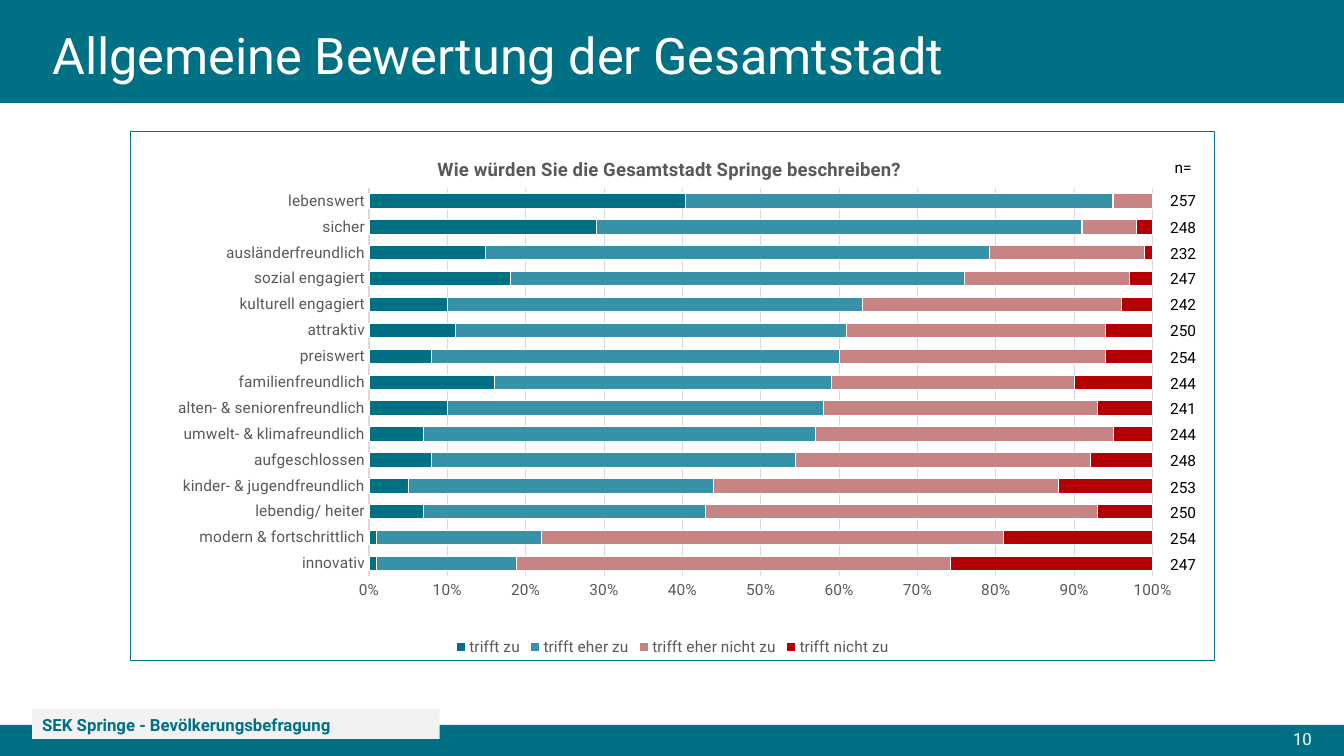
from dataclasses import dataclass

from lxml import etree
from pptx import Presentation
from pptx.chart.chart import Chart
from pptx.chart.data import CategoryChartData
from pptx.dml.color import RGBColor
from pptx.enum.chart import XL_CHART_TYPE as ChartType
from pptx.enum.chart import XL_LEGEND_POSITION as LegendPosition
from pptx.enum.chart import XL_TICK_MARK as TickMark
from pptx.enum.text import MSO_ANCHOR as Anchor
from pptx.enum.text import PP_ALIGN as Align
from pptx.oxml import parse_xml
from pptx.oxml.ns import nsdecls, qn
from pptx.slide import Slide
from pptx.util import Pt
from pptx.enum.shapes import MSO_SHAPE as ShapeKind

EMU_PER_PX = 9144
FONT = "Roboto"

TEAL = RGBColor(0x00, 0x70, 0x85)
LIGHT_TEAL = RGBColor(0x38, 0x91, 0xA7)
ROSE = RGBColor(0xC7, 0x84, 0x84)
RED = RGBColor(0xB2, 0x00, 0x05)
WHITE = RGBColor(0xFF, 0xFF, 0xFF)
BLACK = RGBColor(0x00, 0x00, 0x00)
PALE_GREY = RGBColor(0xF2, 0xF2, 0xF2)
GRID_GREY = RGBColor(0xD9, 0xD9, 0xD9)
TEXT_GREY = RGBColor(0x59, 0x59, 0x59)


@dataclass(frozen=True)
class Box:
    left: int
    top: int
    width: int
    height: int

    def emu(self) -> tuple[int, ...]:
        return tuple(
            px(length) for length in (self.left, self.top, self.width, self.height)
        )


@dataclass(frozen=True)
class Label:
    text: str
    box: Box
    size: float
    color: RGBColor
    align: Align = Align.LEFT
    anchor: Anchor = Anchor.MIDDLE
    bold: bool = False
    spacing: float = 1.0
    fill: RGBColor | None = None


@dataclass(frozen=True)
class Rating:
    quality: str
    shares: tuple[int, int, int, int]
    respondents: int


@dataclass(frozen=True)
class Answer:
    name: str
    color: RGBColor


BANDS = (Box(0, 0, 1333, 102), Box(0, 719, 1333, 31))

ANSWERS = (
    Answer("trifft zu", TEAL),
    Answer("trifft eher zu", LIGHT_TEAL),
    Answer("trifft eher nicht zu", ROSE),
    Answer("trifft nicht zu", RED),
)

RATINGS = (
    Rating("lebenswert", (40, 54, 5, 0), 257),
    Rating("sicher", (29, 62, 7, 2), 248),
    Rating("ausländerfreundlich", (15, 65, 20, 1), 232),
    Rating("sozial engagiert", (18, 58, 21, 3), 247),
    Rating("kulturell engagiert", (10, 53, 33, 4), 242),
    Rating("attraktiv", (11, 50, 33, 6), 250),
    Rating("preiswert", (8, 52, 34, 6), 254),
    Rating("familienfreundlich", (16, 43, 31, 10), 244),
    Rating("alten- & seniorenfreundlich", (10, 48, 35, 7), 241),
    Rating("umwelt- & klimafreundlich", (7, 50, 38, 5), 244),
    Rating("aufgeschlossen", (8, 47, 38, 8), 248),
    Rating("kinder- & jugendfreundlich", (5, 39, 44, 12), 253),
    Rating("lebendig/ heiter", (7, 36, 50, 7), 250),
    Rating("modern & fortschrittlich", (1, 21, 59, 19), 254),
    Rating("innovativ", (1, 18, 56, 26), 247),
)

TITLE = Label("Allgemeine Bewertung der Gesamtstadt", Box(42, 21, 1150, 73),
              36, WHITE, spacing=0.9)
PAGE_NUMBER = Label("10", Box(872, 718, 439, 30), 12, WHITE, Align.RIGHT)
FOOTER = Label("SEK Springe - Bevölkerungsbefragung", Box(32, 703, 404, 30),
               12, TEAL, bold=True, spacing=1.07, fill=PALE_GREY)

CHART_BOX = Box(129, 130, 1076, 526)
FIRST_COUNT_TOP = 185
COUNT_PITCH = 25.79


def px(length: int) -> int:
    return length * EMU_PER_PX


def style_font(font, size: float, color: RGBColor, bold: bool = False) -> None:
    font.name = FONT
    font.size = Pt(size)
    font.bold = bold
    font.color.rgb = color


def add_band(slide: Slide, box: Box) -> None:
    band = slide.shapes.add_shape(ShapeKind.RECTANGLE, *box.emu())
    band.shadow.inherit = False
    band.fill.solid()
    band.fill.fore_color.rgb = TEAL
    band.line.fill.background()


def add_label(slide: Slide, label: Label) -> None:
    holder = slide.shapes.add_textbox(*label.box.emu())
    if label.fill is not None:
        holder.fill.solid()
        holder.fill.fore_color.rgb = label.fill
    frame = holder.text_frame
    frame.word_wrap = True
    frame.vertical_anchor = label.anchor
    frame.text = label.text
    paragraph = frame.paragraphs[0]
    paragraph.alignment = label.align
    paragraph.line_spacing = label.spacing
    style_font(paragraph.runs[0].font, label.size, label.color, label.bold)


def add_count(slide: Slide, text: str, top: int) -> None:
    add_label(slide, Label(text, Box(1147, top, 53, 29), 11, BLACK,
                           Align.CENTER, Anchor.TOP))


def set_layout(parent, index: int, **settings: str | float) -> None:
    """Give a chart part a manual layout, at the child index its schema asks for."""
    layout = parent.find(qn("c:layout"))
    if layout is None:
        layout = etree.Element(qn("c:layout"))
        parent.insert(index, layout)
    manual = etree.SubElement(layout, qn("c:manualLayout"))
    for tag, setting in settings.items():
        etree.SubElement(manual, qn(f"c:{tag}")).set("val", str(setting))


def frame_chart(chart: Chart) -> None:
    """Fill the chart area and outline it; chart.font must be set before."""
    area = parse_xml(
        f'<c:spPr {nsdecls("c", "a")}>'
        f'<a:solidFill><a:srgbClr val="{WHITE}"/></a:solidFill>'
        f'<a:ln w="9525"><a:solidFill><a:srgbClr val="{TEAL}"/></a:solidFill></a:ln>'
        "</c:spPr>"
    )
    chart.element.find(qn("c:txPr")).addprevious(area)


def style_line(line, color: RGBColor) -> None:
    line.color.rgb = color
    line.width = Pt(0.75)


def style_axes(chart: Chart) -> None:
    for axis in (chart.category_axis, chart.value_axis):
        axis.major_tick_mark = axis.minor_tick_mark = TickMark.NONE
        style_font(axis.tick_labels.font, 11, TEXT_GREY)
    style_line(chart.category_axis.format.line, GRID_GREY)
    shares_axis = chart.value_axis
    shares_axis.format.line.fill.background()
    shares_axis.minimum_scale, shares_axis.maximum_scale = 0, 1
    shares_axis.major_unit = 0.1
    shares_axis.tick_labels.number_format = "0%"
    shares_axis.tick_labels.number_format_is_linked = False
    style_line(shares_axis.major_gridlines.format.line, GRID_GREY)


def add_ratings_chart(slide: Slide) -> None:
    bottom_up = RATINGS[::-1]
    data = CategoryChartData()
    data.categories = [rating.quality for rating in bottom_up]
    for position, answer in enumerate(ANSWERS):
        data.add_series(answer.name, [rating.shares[position] for rating in bottom_up])
    chart = slide.shapes.add_chart(
        ChartType.BAR_STACKED_100, *CHART_BOX.emu(), data).chart
    style_font(chart.font, 11, BLACK)
    frame_chart(chart)

    chart.has_title = True
    heading = chart.chart_title.text_frame
    heading.text = "Wie würden Sie die Gesamtstadt Springe beschreiben?"
    style_font(heading.paragraphs[0].runs[0].font, 13.2, TEXT_GREY, bold=True)
    set_layout(chart.chart_title._element, 1, xMode="edge", yMode="edge", x=0.28, y=0.04)
    set_layout(chart._chartSpace.chart.plotArea, 0, layoutTarget="inner",
               xMode="edge", yMode="edge", x=0.22, y=0.107, w=0.723, h=0.734)

    chart.has_legend = True
    chart.legend.position = LegendPosition.BOTTOM
    chart.legend.include_in_layout = False
    style_font(chart.legend.font, 11, TEXT_GREY)
    style_axes(chart)

    plot = chart.plots[0]
    plot.gap_width, plot.overlap = 80, 100
    plot.vary_by_categories = False
    for series, answer in zip(plot.series, ANSWERS):
        series.format.fill.solid()
        series.format.fill.fore_color.rgb = answer.color
        style_line(series.format.line, WHITE)


def main() -> None:
    deck = Presentation()
    deck.slide_width, deck.slide_height = px(1333), px(750)
    slide = deck.slides.add_slide(deck.slide_layouts[6])
    for band in BANDS:
        add_band(slide, band)
    for label in (PAGE_NUMBER, FOOTER, TITLE):
        add_label(slide, label)
    add_ratings_chart(slide)
    add_count(slide, "n=", 152)
    for row, rating in enumerate(RATINGS):
        add_count(slide, str(rating.respondents),
                  FIRST_COUNT_TOP + round(row * COUNT_PITCH))
    deck.save("out.pptx")


if __name__ == "__main__":
    main()
